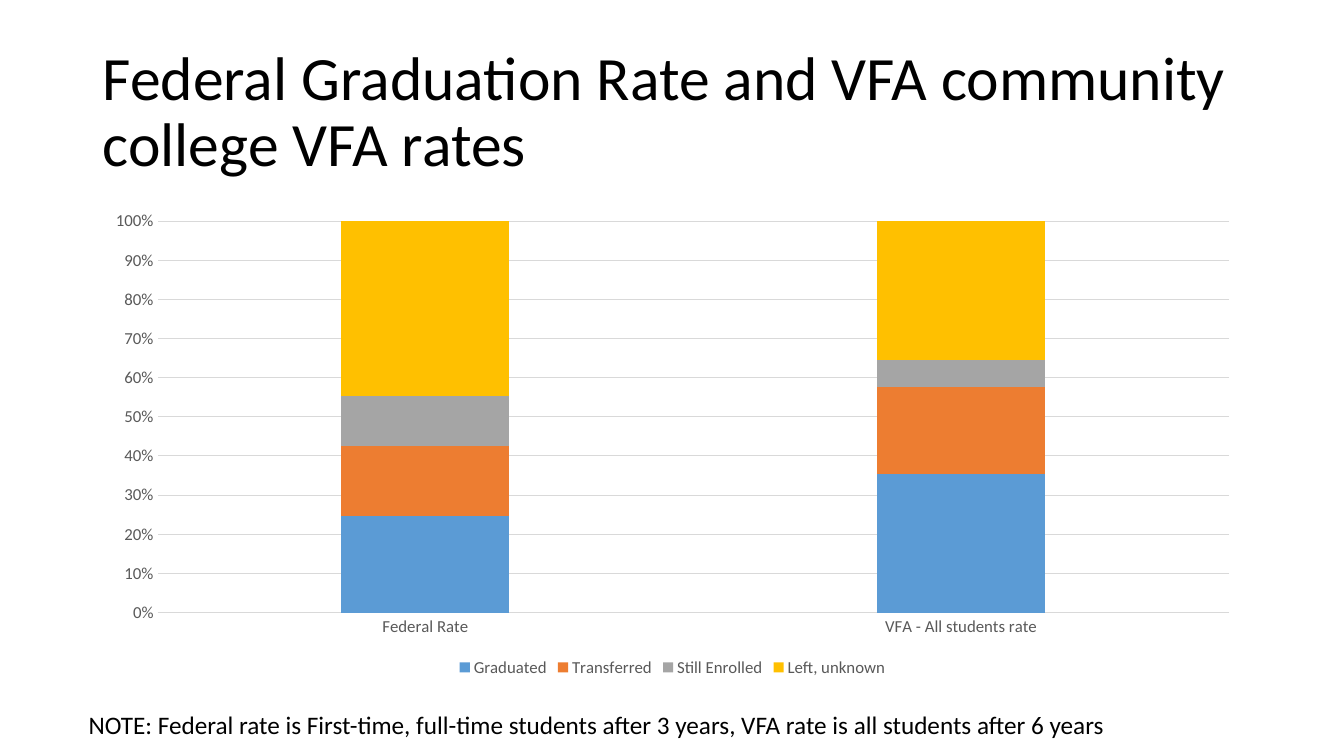
import pptx
import pptx.chart.data
import pptx.dml.color
import pptx.enum.chart
import pptx.enum.text
import pptx.util
from pptx.util import Inches

FONT = "Calibri"
COLORS = {
    "text": "000000",
    "label": "595959",
    "grid": "D9D9D9",
    "Graduated": "5B9BD5",
    "Transferred": "ED7D31",
    "Still Enrolled": "A5A5A5",
    "Left, unknown": "FFC000",
}
CATEGORIES = ["Federal Rate", "VFA - All students rate"]
OUTCOMES = {
    "Graduated": (25, 35),
    "Transferred": (18, 22),
    "Still Enrolled": (13, 7),
    "Left, unknown": (45, 35),
}


def rgb(name):
    """Return the named colour."""
    return pptx.dml.color.RGBColor.from_string(COLORS[name])


def style_font(font, size, color):
    """Set typeface, size and colour."""
    font.name = FONT
    font.size = pptx.util.Pt(size)
    font.color.rgb = rgb(color)


def style_line(line, color):
    """Set a thin solid line."""
    line.color.rgb = rgb(color)
    line.width = pptx.util.Pt(0.75)


def add_text(page, text, left, top, width, height, *, size, color="text",
             anchor=pptx.enum.text.MSO_ANCHOR.TOP, wrap=True, spacing=1.0):
    """Add a text box holding one formatted paragraph."""
    box = page.shapes.add_textbox(Inches(left), Inches(top), Inches(width), Inches(height))
    frame = box.text_frame
    frame.word_wrap = wrap
    frame.vertical_anchor = anchor
    para = frame.paragraphs[0]
    para.line_spacing = spacing
    span = para.add_run()
    span.text = text
    style_font(span.font, size, color)


def style_axis(axis):
    """Remove ticks and format the labels of an axis."""
    axis.major_tick_mark = pptx.enum.chart.XL_TICK_MARK.NONE
    axis.minor_tick_mark = pptx.enum.chart.XL_TICK_MARK.NONE
    style_font(axis.tick_labels.font, 12, "label")


def add_outcome_chart(page, left, top, width, height):
    """Add the stacked chart of student outcomes."""
    data = pptx.chart.data.CategoryChartData()
    data.categories = CATEGORIES
    for name, values in OUTCOMES.items():
        data.add_series(name, values)
    chart = page.shapes.add_chart(
        pptx.enum.chart.XL_CHART_TYPE.COLUMN_STACKED_100,
        Inches(left), Inches(top), Inches(width), Inches(height), data).chart
    chart.has_title = False
    style_font(chart.font, 10, "text")

    plot = chart.plots[0]
    plot.gap_width = 219
    plot.overlap = 100
    plot.vary_by_categories = False
    for series in plot.series:
        series.format.fill.solid()
        series.format.fill.fore_color.rgb = rgb(series.name)

    style_axis(chart.category_axis)
    style_line(chart.category_axis.format.line, "grid")
    rates = chart.value_axis
    style_axis(rates)
    rates.format.line.fill.background()
    rates.has_major_gridlines = True
    style_line(rates.major_gridlines.format.line, "grid")
    rates.tick_labels.number_format = "0%"
    rates.tick_labels.number_format_is_linked = False

    chart.has_legend = True
    chart.legend.position = pptx.enum.chart.XL_LEGEND_POSITION.BOTTOM
    chart.legend.include_in_layout = False
    style_font(chart.legend.font, 12, "label")


def main():
    """Build and save the slide."""
    deck = pptx.Presentation()
    deck.slide_width = Inches(13.33)
    deck.slide_height = Inches(7.5)
    page = deck.slides.add_slide(deck.slide_layouts[6])
    add_text(page, "Federal Graduation Rate and VFA community college VFA rates",
             0.92, 0.4, 11.5, 1.45, size=44, spacing=0.9,
             anchor=pptx.enum.text.MSO_ANCHOR.MIDDLE)
    add_outcome_chart(page, 0.92, 2, 11.5, 4.76)
    add_text(page, "NOTE: Federal rate is First-time, full-time students after 3 years, "
             "VFA rate is all students after 6 years",
             0.78, 6.99, 10.41, 0.4, size=18, wrap=False)
    deck.save("out.pptx")


if __name__ == "__main__":
    main()
